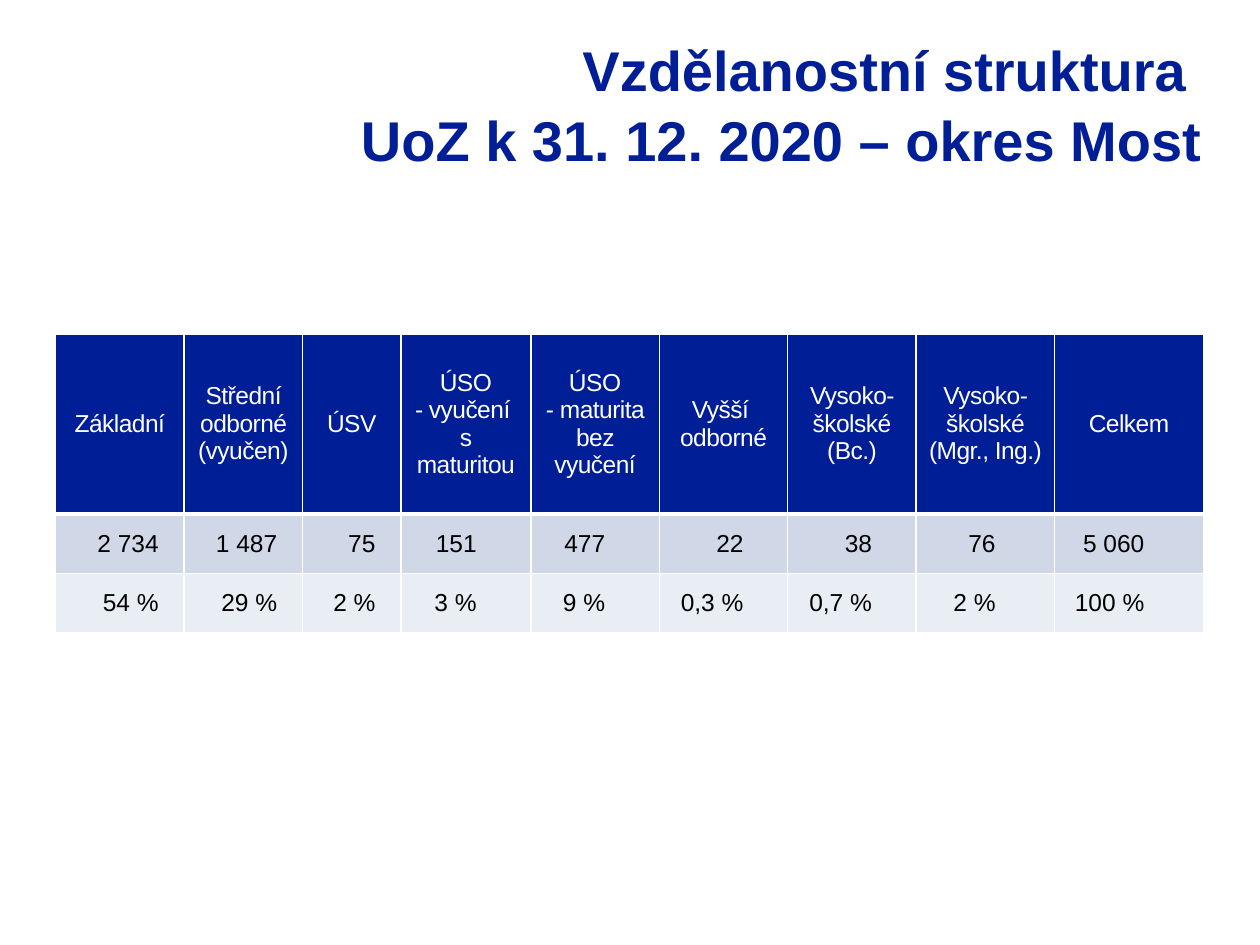
import pptx
import pptx.util
import pptx.dml.color
import pptx.enum.text
import pptx.oxml
import pptx.oxml.ns

Cm = pptx.util.Cm
Pt = pptx.util.Pt
ALIGN = pptx.enum.text.PP_ALIGN

COLORS = {"navy": "001E96", "white": "FFFFFF", "black": "000000",
          "band_dark": "D0D8E8", "band_light": "E9EDF4"}

TITLE = "Vzdělanostní struktura \vUoZ k 31. 12. 2020 – okres Most"

EDUCATION = [
    ("Základní", "2 734", "54 %", 2.59, 0.51),
    ("Střední odborné (vyučen)", "1 487", "29 %", 2.39, 0.51),
    ("ÚSV", "75", "2 %", 1.98, 0.51),
    ("ÚSO\v- vyučení \vs maturitou", "151", "3 %", 2.62, 1.09),
    ("ÚSO\v- maturita bez vyučení", "477", "9 %", 2.59, 1.09),
    ("Vyšší \vodborné", "22", "0,3 %", 2.59, 0.89),
    ("Vysoko-školské\n(Bc.)", "38", "0,7 %", 2.59, 0.89),
    ("Vysoko-školské\v(Mgr., Ing.)", "76", "2 %", 2.79, 1.19),
    ("Celkem", "5 060", "100 %", 3.0, 1.19),
]
ROW_HEIGHTS = [3.63, 1.2, 1.2]
ROW_FILLS = ["navy", "band_dark", "band_light"]


def rgb(name):
    return pptx.dml.color.RGBColor.from_string(COLORS[name])


def format_text(frame, size, color, align, bold=False, spacing=0):
    for paragraph in frame.paragraphs:
        paragraph.alignment = align
        for run in paragraph.runs:
            run.font.name = "Arial"
            run.font.size = Pt(size)
            run.font.bold = bold
            run.font.color.rgb = rgb(color)
            if spacing:
                run.font._element.set("spc", str(spacing))


def add_borders(cell, top, bottom):
    properties = cell._tc.get_or_add_tcPr()
    for side, width in (("L", 1), ("R", 1), ("T", top), ("B", bottom)):
        properties.append(pptx.oxml.parse_xml(
            f'<a:ln{side} {pptx.oxml.ns.nsdecls("a")} w="{Pt(width)}"><a:solidFill>'
            f'<a:srgbClr val="{COLORS["white"]}"/></a:solidFill></a:ln{side}>'))


def add_title(slide):
    title = slide.shapes.add_textbox(Cm(6.1), Cm(0.53), Cm(18.39), Cm(3.81))
    title.text_frame.word_wrap = True
    title.text_frame.text = TITLE
    title.text_frame.paragraphs[0].line_spacing = 1.04
    format_text(title.text_frame, 32, "navy", ALIGN.RIGHT, bold=True)


def add_education_table(slide):
    widths = [entry[3] for entry in EDUCATION]
    table = slide.shapes.add_table(len(ROW_HEIGHTS), len(EDUCATION), Cm(1.12), Cm(6.73),
                                   Cm(sum(widths)), Cm(sum(ROW_HEIGHTS))).table
    for row, height in zip(table.rows, ROW_HEIGHTS):
        row.height = Cm(height)
    for column, (*texts, width, right_margin) in enumerate(EDUCATION):
        table.columns[column].width = Cm(width)
        for row, (text, fill) in enumerate(zip(texts, ROW_FILLS)):
            cell = table.cell(row, column)
            cell.text_frame.text = text
            cell.vertical_anchor = pptx.enum.text.MSO_ANCHOR.MIDDLE
            add_borders(cell, 3 if row == 1 else 1, 3 if row == 0 else 1)
            cell.fill.solid()
            cell.fill.fore_color.rgb = rgb(fill)
            if row == 0:
                format_text(cell.text_frame, 14, "white", ALIGN.CENTER, spacing=-30)
            else:
                cell.margin_right = Cm(right_margin)
                format_text(cell.text_frame, 14, "black", ALIGN.RIGHT)


def main():
    deck = pptx.Presentation()
    deck.slide_width = Cm(25.4)
    deck.slide_height = Cm(19.05)
    slide = deck.slides.add_slide(deck.slide_layouts[6])
    add_title(slide)
    add_education_table(slide)
    deck.save("out.pptx")


if __name__ == "__main__":
    main()
